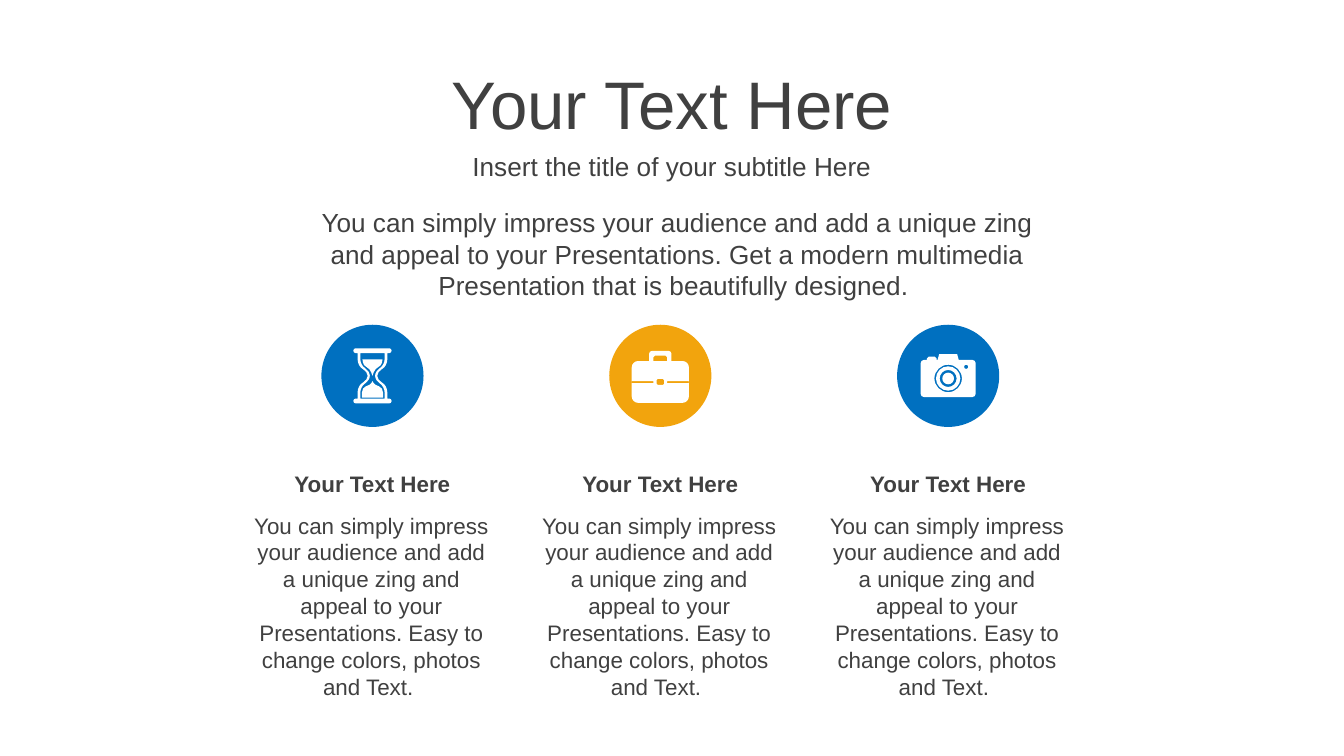
from dataclasses import dataclass

from lxml.etree import SubElement
from pptx import Presentation
from pptx.dml.color import RGBColor
from pptx.enum.shapes import MSO_SHAPE as Preset
from pptx.enum.text import MSO_ANCHOR as Anchor
from pptx.enum.text import MSO_AUTO_SIZE as AutoSize
from pptx.enum.text import PP_ALIGN as Align
from pptx.oxml.ns import qn
from pptx.util import Cm, Pt


@dataclass(frozen=True)
class Theme:
    font: str = "Arial"
    text: RGBColor = RGBColor(0x40, 0x40, 0x40)
    blue: RGBColor = RGBColor(0x00, 0x70, 0xC0)
    orange: RGBColor = RGBColor(0xF2, 0xA4, 0x0D)
    icon: RGBColor = RGBColor(0xFF, 0xFF, 0xFF)
    title_size: int = 36
    intro_size: int = 14
    column_size: int = 12


THEME = Theme()

# Layout in centimetres
WIDTH, HEIGHT = 25.4, 14.28
FIRST_CENTER, COLUMN_STEP = 7.04, 5.44
BADGE_MIDDLE, BADGE_SIZE = 7.1, 1.93
ROUNDNESS = 0.55  # share of the way to the corner for a curve's control points

HEADING = "Your Text Here"
SUBTITLE = "Insert the title of your subtitle Here"
INTRO = ("You can simply impress your audience and add a unique zing and appeal to "
         "your Presentations. Get a modern multimedia Presentation that is "
         "beautifully designed. ")
BODY = ("You can simply impress your audience and add a unique zing and appeal to "
        "your Presentations. Easy to change colors, photos and Text. ")


# Outlines: corners (x, y, radius) in centimetres around the badge center
def box(left, top, right, bottom, radius=0):
    return [(x, y, radius) for x, y in
            ((left, top), (right, top), (right, bottom), (left, bottom))]


def circle(x, y, radius):
    return box(x - radius, y - radius, x + radius, y + radius, radius)


def mirrored(right_side):
    return right_side + [(-x, y, r) for x, y, r in reversed(right_side) if x]


def hourglass():
    def upright(upper):
        return mirrored(upper + [(x, -y, r) for x, y, r in reversed(upper)])

    frame = [(0.36, -0.52, 0.04), (0.36, -0.43, 0.04), (0.28, -0.43, 0),
             (0.28, -0.18, 0.2), (0.09, -0.08, 0.1)]
    glass = [(0.23, -0.43, 0), (0.23, -0.2, 0.2), (0.05, -0.09, 0.1)]
    top_sand = [(0.19, -0.31, 0), (0.17, -0.19, 0.1), (0.05, -0.14, 0.1), (0, 0, 0)]
    low_sand = [(0, 0.1, 0), (0.04, 0.17, 0.06), (0.2, 0.22, 0.2), (0.2, 0.41, 0)]
    return [upright(frame), upright(glass), mirrored(top_sand), mirrored(low_sand)]


def briefcase():
    case = [(0.21, -0.47, 0.05), (0.21, -0.28, 0), (0.54, -0.28, 0.12),
            (0.54, 0.51, 0.12)]
    window = [(0.13, -0.38, 0.03), (0.13, -0.28, 0)]
    slit = box(0.13, 0.1, 0.54, 0.14)
    return [mirrored(case), mirrored(window), slit,
            [(-x, y, r) for x, y, r in slit],
            box(-0.07, 0.06, 0.07, 0.17, 0.02)]


def camera():
    case = [(-0.52, -0.3, 0.06), (-0.4, -0.3, 0), (-0.4, -0.36, 0.03),
            (-0.22, -0.36, 0.03), (-0.22, -0.3, 0), (-0.2, -0.3, 0),
            (-0.17, -0.41, 0), (0.17, -0.41, 0), (0.2, -0.3, 0),
            (0.52, -0.3, 0.06), (0.52, 0.4, 0.06), (-0.52, 0.4, 0.06)]
    lens = [circle(0, 0.05, radius) for radius in (0.26, 0.23, 0.16, 0.11)]
    return [case, *lens, circle(0.34, -0.17, 0.04)]


def trace(corners):
    """Turn corners into segments of one point (line) or three (curve)."""
    segments = []
    for i, (x, y, radius) in enumerate(corners):
        if not radius:
            segments.append([(x, y)])
            continue
        ends, controls = [], []
        for nx, ny, _ in (corners[i - 1], corners[(i + 1) % len(corners)]):
            length = ((nx - x) ** 2 + (ny - y) ** 2) ** 0.5
            reach = min(radius / length, 0.5)
            for points, part in ((ends, reach), (controls, reach * (1 - ROUNDNESS))):
                points.append((x + (nx - x) * part, y + (ny - y) * part))
        segments += [[ends[0]], [*controls, ends[1]]]
    return segments


# Elements
def paint(shape, color):
    shape.fill.solid()
    shape.fill.fore_color.rgb = color
    shape.line.fill.background()
    shape.shadow.inherit = False


def add_text(slide, text, left, top, width, height, size, bold=False,
             anchor=Anchor.TOP, auto_size=AutoSize.SHAPE_TO_FIT_TEXT):
    shape = slide.shapes.add_textbox(Cm(left), Cm(top), Cm(width), Cm(height))
    frame = shape.text_frame
    frame.word_wrap = True
    frame.auto_size = auto_size
    frame.vertical_anchor = anchor
    paragraph = frame.paragraphs[0]
    paragraph.text = text
    paragraph.alignment = Align.CENTER
    paragraph.font.name = THEME.font
    paragraph.font.size = Pt(size)
    paragraph.font.bold = bold
    paragraph.font.color.rgb = THEME.text


def add_icon(slide, center, outlines):
    traced = [trace(outline) for outline in outlines]
    builder = None
    for segments in traced:
        start, *others = [(Cm(center + x), Cm(BADGE_MIDDLE + y))
                          for segment in segments for x, y in segment]
        if builder is None:
            builder = slide.shapes.build_freeform(*start)
        else:
            builder.move_to(*start)
        builder.add_line_segments(others, close=True)
    shape = builder.convert_to_shape()

    # Join the three points of each curve into one Bezier segment
    lines = iter(list(shape.element.iter(qn("a:lnTo"))))
    for segments in traced:
        for segment in segments[1:]:
            steps = [next(lines) for _ in segment]
            if len(steps) == 3:
                curve = SubElement(steps[0].getparent(), qn("a:cubicBezTo"))
                steps[0].addprevious(curve)
                for step in steps:
                    curve.append(step[0])
                    step.getparent().remove(step)
    paint(shape, THEME.icon)


def add_column(slide, center, color, outlines):
    half = BADGE_SIZE / 2
    badge = slide.shapes.add_shape(
        Preset.OVAL, Cm(center - half), Cm(BADGE_MIDDLE - half),
        Cm(BADGE_SIZE), Cm(BADGE_SIZE))
    paint(badge, color)
    add_icon(slide, center, outlines)
    add_text(slide, HEADING, center - 2.54, 8.76, 5.08, 0.76,
             THEME.column_size, bold=True)
    add_text(slide, BODY, center - 2.52, 9.54, 5, 3.84, THEME.column_size)


def main():
    presentation = Presentation()
    presentation.slide_width, presentation.slide_height = Cm(WIDTH), Cm(HEIGHT)
    slide = presentation.slides.add_slide(presentation.slide_layouts[6])

    # Title, subtitle and introduction
    add_text(slide, HEADING, 0, 1.14, WIDTH, 1.6, THEME.title_size,
             anchor=Anchor.MIDDLE, auto_size=AutoSize.NONE)
    add_text(slide, SUBTITLE, 0, 2.74, WIDTH, 0.8, THEME.intro_size,
             anchor=Anchor.MIDDLE, auto_size=AutoSize.NONE)
    add_text(slide, INTRO, 5.7, 3.78, 14.2, 2.06, THEME.intro_size)

    # Three columns
    columns = [(THEME.blue, hourglass()), (THEME.orange, briefcase()),
               (THEME.blue, camera())]
    for number, (color, outlines) in enumerate(columns):
        add_column(slide, FIRST_CENTER + number * COLUMN_STEP, color, outlines)

    presentation.save("out.pptx")


if __name__ == "__main__":
    main()
